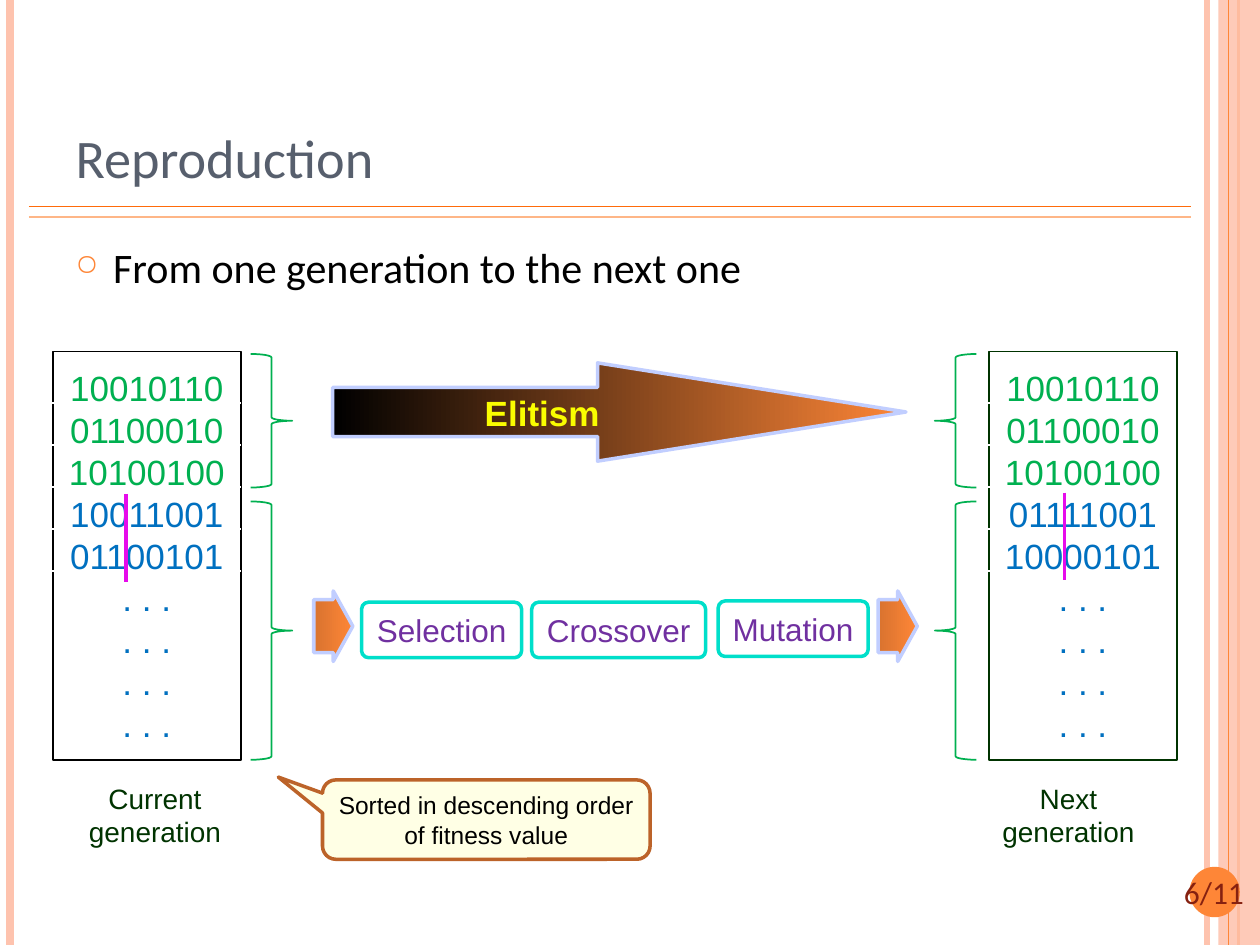
from pptx import Presentation
from pptx.dml.color import RGBColor
from pptx.enum.shapes import MSO_CONNECTOR, MSO_SHAPE as SHAPE
from pptx.enum.text import MSO_ANCHOR as ANCHOR, PP_ALIGN as ALIGN
from pptx.oxml.ns import qn
from pptx.util import Inches, Pt
from lxml.etree import SubElement

ORANGE, PINK, WHITE = "FE8637", "FEC3AE", "FFFFFF"
GREEN, BLUE, DARK_GREEN = "00B050", "0070C0", "003300"
PURPLE, TURQUOISE, MAGENTA, LAVENDER = "7030A0", "00DFCA", "E60BEB", "C1CEFF"


def color(hex_string):
    return RGBColor.from_string(hex_string)


def set_alpha(fill, percent):
    """Make the solid fill partly transparent."""
    clr = fill._xPr.find(qn("a:solidFill"))[0]
    SubElement(clr, qn("a:alpha"), val=str(percent * 1000))


def add_bullet(p, char, hex_string, percent, indent):
    pPr = p._p.get_or_add_pPr()
    pPr.set("marL", str(Inches(indent)))
    pPr.set("indent", str(-Inches(indent)))
    clr = SubElement(pPr, qn("a:buClr"))
    SubElement(clr, qn("a:srgbClr"), val=hex_string)
    SubElement(pPr, qn("a:buSzPct"), val=str(percent * 1000))
    SubElement(pPr, qn("a:buChar"), char=char)


def write(sp, lines, size=18, font="Arial", fill="000000", bold=False,
          align=ALIGN.CENTER, anchor=ANCHOR.MIDDLE, wrap=False, spacing=None):
    """Write one paragraph a line; a line is a text or a (text, colour) pair."""
    tf = sp.text_frame
    tf.word_wrap = wrap
    tf.vertical_anchor = anchor
    for i, line in enumerate(lines):
        text, hex_string = line if isinstance(line, tuple) else (line, fill)
        p = tf.add_paragraph() if i else tf.paragraphs[0]
        p.alignment = align
        if spacing:
            p.line_spacing = Pt(spacing)
        r = p.add_run()
        r.text = text
        r.font.name, r.font.size, r.font.bold = font, Pt(size), bold
        r.font.color.rgb = color(hex_string)
    return tf


class SlideBuilder:
    heading_font = "Calibri"

    def __init__(self, prs):
        self.s = prs.slides.add_slide(prs.slide_layouts[5])

    def title(self, text, x, y, w, h):
        sp = self.s.shapes.title
        sp.left, sp.top, sp.width, sp.height = map(Inches, (x, y, w, h))
        write(sp, [text], size=31, font=self.heading_font, fill="575F6D",
              align=ALIGN.LEFT, anchor=ANCHOR.BOTTOM, wrap=True)

    def text(self, lines, x, y, w, h, **fmt):
        sp = self.s.shapes.add_textbox(*map(Inches, (x, y, w, h)))
        return write(sp, lines, **{"anchor": ANCHOR.TOP, **fmt})

    def shape(self, kind, x, y, w, h, fill=None, alpha=None, gradient=None,
              line=None, width=1, adj=(), flip=False):
        sp = self.s.shapes.add_shape(kind, *map(Inches, (x, y, w, h)))
        sp.shadow.inherit = False
        for i, value in enumerate(adj):
            sp.adjustments[i] = value
        if gradient:
            sp.fill.gradient()
            sp.fill.gradient_angle = 0
            for stop, hex_string in zip(sp.fill.gradient_stops, gradient):
                stop.color.rgb = color(hex_string)
        elif fill:
            sp.fill.solid()
            sp.fill.fore_color.rgb = color(fill)
            if alpha:
                set_alpha(sp.fill, alpha)
        else:
            sp.fill.background()
        if line:
            sp.line.color.rgb = color(line)
            sp.line.width = Pt(width)
        else:
            sp.line.fill.background()
        if flip:
            sp._element.spPr.get_or_add_xfrm().set("flipH", "1")
        return sp

    def line(self, x1, y1, x2, y2, hex_string, width=1):
        c = self.s.shapes.add_connector(
            MSO_CONNECTOR.STRAIGHT, *map(Inches, (x1, y1, x2, y2)))
        c.line.color.rgb = color(hex_string)
        c.line.width = Pt(width)
        SubElement(c._element.spPr, qn("a:effectLst"))

    def generation(self, x, border, strings, tick_x):
        """Box of chromosomes; white ticks break its border between rows."""
        sp = self.shape(SHAPE.RECTANGLE, x, 2.79, 1.49, 3.24, line=border)
        rows = [(t, GREEN if i < 3 else BLUE) for i, t in enumerate(strings)]
        write(sp, rows + [(". . .", BLUE)] * 4, size=20, spacing=24)
        for i in range(5):
            y = 3.2 + i / 3
            self.line(tick_x, y, tick_x + 1.5, y, WHITE)

    def braces(self, x, flip=False):
        for y, h in ((2.81, 1.06), (3.98, 2.05)):
            self.shape(SHAPE.RIGHT_BRACE, x, y, 0.33, h, line=GREEN, flip=flip)

    def step_arrow(self, x):
        self.shape(SHAPE.RIGHT_ARROW, x, 4.69, 0.31, 0.56, adj=(0.75, 0.5),
                   gradient=("D9732F", ORANGE), line=LAVENDER, width=2)


def main():
    prs = Presentation()
    prs.slide_width, prs.slide_height = Inches(10), Inches(7.5)
    b = SlideBuilder(prs)

    # Side stripes and title rules
    for x, hex_string, width in ((9.58, PINK, 3), (0.08, PINK, 4.5),
                                 (9.83, ORANGE, 1.5)):
        b.line(x, 0, x, 7.5, hex_string, width)
    b.shape(SHAPE.RECTANGLE, 9.67, 0, 0.33, 7.5, fill=PINK, alpha=87)
    b.line(9.75, 0, 9.75, 7.5, ORANGE, 0.75)
    for y, hex_string in ((1.64, "FF6B0A"), (1.72, "FEB687")):
        b.line(0.23, y, 9.45, y, hex_string)

    # Page number
    b.shape(SHAPE.OVAL, 9.44, 6.88, 0.4, 0.4, fill=ORANGE)
    b.text(["6/11"], 9.18, 6.88, 0.91, 0.4, font=b.heading_font,
           fill="862110", wrap=True)

    # Title and bullet
    b.title("Reproduction", 0.5, 0.3, 8.64, 1.25)
    tf = b.text(["From one generation to the next one"], 0.5, 1.87, 8.17, 0.6,
                size=24, font=b.heading_font, align=ALIGN.LEFT, wrap=True)
    add_bullet(tf.paragraphs[0], "○", ORANGE, 70, 0.3)

    # Both generations
    kept = ["10010110", "01100010", "10100100"]
    b.generation(0.42, "000000", kept + ["10011001", "01100101"], 0.41)
    b.generation(7.85, DARK_GREEN, kept + ["01111001", "10000101"], 7.74)
    for x, name in ((0.6, "Current"), (7.85, "Next")):
        b.text([name, "generation"], x, 6.15, 1.26, 0.64, size=16,
               fill=DARK_GREEN)

    # Genetic operators
    b.step_arrow(2.49)
    for name, x, y, w in (("Selection", 2.87, 4.78, 1.27),
                          ("Crossover", 4.22, 4.78, 1.38),
                          ("Mutation", 5.7, 4.77, 1.19)):
        sp = b.shape(SHAPE.ROUNDED_RECTANGLE, x, y, w, 0.44, adj=(0.125,),
                     line=TURQUOISE, width=2)
        write(sp, [name], fill=PURPLE)
    b.step_arrow(6.97)

    # Elitism
    sp = b.shape(SHAPE.RIGHT_ARROW, 2.64, 2.88, 4.55, 0.78, adj=(0.5, 3.138),
                 gradient=("000000", ORANGE), line=LAVENDER, width=2)
    write(sp, ["Elitism"], size=20, fill="FAFD00", bold=True)

    # Braces and crossover points
    b.braces(1.99)
    b.braces(7.42, flip=True)
    b.line(1, 3.92, 1, 4.62, MAGENTA, 2)
    b.line(8.45, 3.91, 8.45, 4.6, MAGENTA, 2)

    # Sorting remark
    sp = b.shape(SHAPE.ROUNDED_RECTANGULAR_CALLOUT, 2.56, 6.19, 2.6, 0.63,
                 adj=(-0.635, -0.536, 0.167), fill="FFFFCC", alpha=50,
                 line="BC6329", width=2)
    write(sp, ["Sorted in descending order", "of fitness value"], size=14)

    prs.save("out.pptx")


if __name__ == "__main__":
    main()
